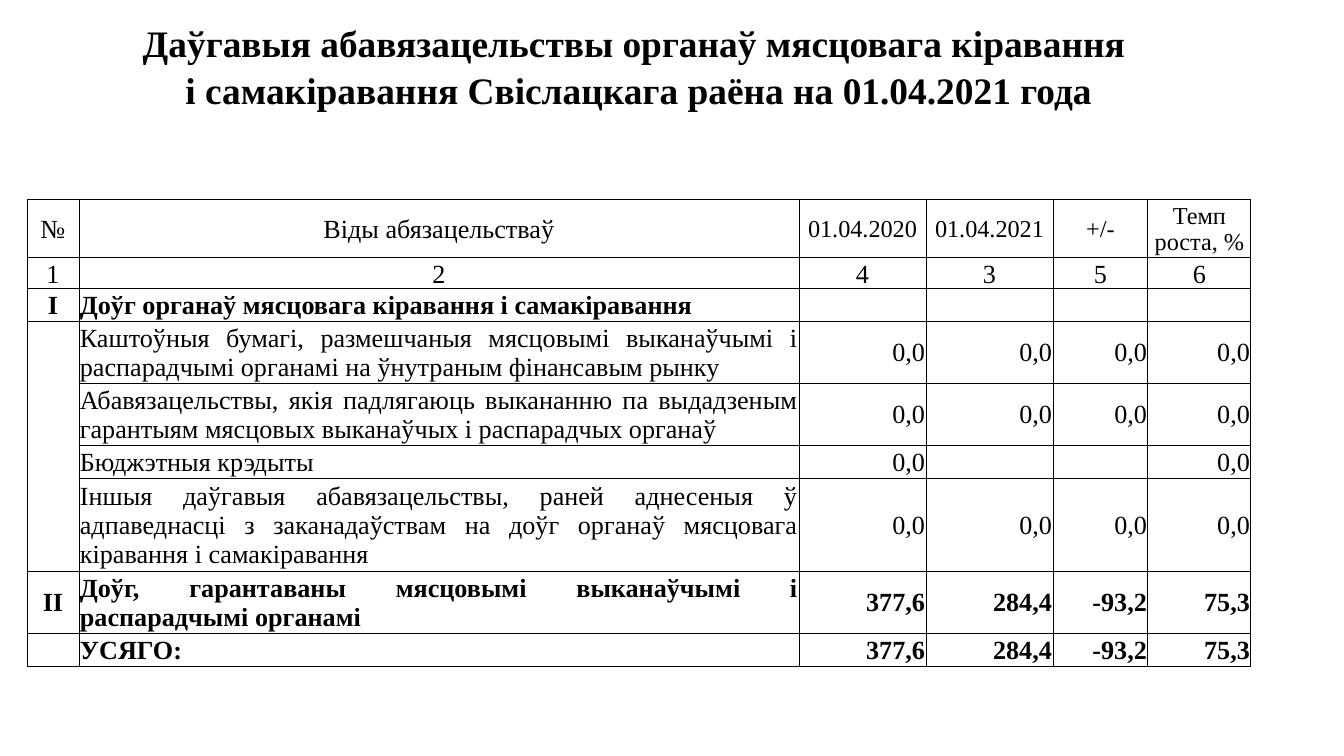
from lxml.etree import SubElement
from pptx import Presentation
from pptx.dml.color import RGBColor
from pptx.enum.text import MSO_ANCHOR as Anchor, PP_ALIGN as Align
from pptx.oxml import parse_xml
from pptx.oxml.ns import nsdecls, qn
from pptx.util import Pt

PX = 914400 / 134.4
FONT = "Times New Roman"
BLACK = RGBColor(0, 0, 0)
WHITE = RGBColor(255, 255, 255)

COLUMNS = [52, 720, 127, 127, 95, 103]
TOP_ROWS = [51, 97, 51, 36]
TITLE_ROW = 1
GRID_ROWS = [58, 31, 31, 62, 62, 31, 93, 62, 31]
OPEN_ROWS = range(3, 7)  # grid rows that share one tall first column

TITLE = ("Даўгавыя абавязацельствы органаў мясцовага кіравання \n"
         "і самакіравання Свіслацкага раёна на 01.04.2021 года")
HEADER = ["№", "Віды абязацельстваў", "01.04.2020", "01.04.2021", "+/-",
          "Темп\nроста, %"]
NUMBERS = ["1", "2", "4", "3", "5", "6"]
ZEROS = ["0,0"] * 4
TOTALS = ["377,6", "284,4", "-93,2", "75,3"]
DEBTS = [
    ["I", "Доўг органаў мясцовага кіравання і самакіравання", *[""] * 4],
    ["", "Каштоўныя бумагі, размешчаныя мясцовымі выканаўчымі і "
         "распарадчымі органамі на ўнутраным фінансавым рынку", *ZEROS],
    ["", "Абавязацельствы, якія падлягаюць выкананню па выдадзеным "
         "гарантыям мясцовых выканаўчых і распарадчых органаў", *ZEROS],
    ["", "Бюджэтныя крэдыты", "0,0", "", "", "0,0"],
    ["", "Іншыя даўгавыя абавязацельствы, раней аднесеныя ў адпаведнасці "
         "з заканадаўствам на доўг органаў мясцовага кіравання і "
         "самакіравання", *ZEROS],
    ["II", "Доўг, гарантаваны мясцовымі выканаўчымі і распарадчымі "
           "органамі", *TOTALS],
    ["", "УСЯГО:", *TOTALS],
]
BOLD_DEBTS = {0, 5, 6}


def px(length):
    return round(length * PX)


def write(cell, text, size=14, bold=False, align=Align.CENTER,
          anchor=Anchor.MIDDLE, spacing=None):
    cell.vertical_anchor = anchor
    cell.margin_left = cell.margin_right = cell.margin_top = px(1)
    cell.margin_bottom = 0
    frame = cell.text_frame
    for index, line in enumerate(text.split("\n")):
        para = frame.add_paragraph() if index else frame.paragraphs[0]
        para.alignment = align
        if spacing:
            para.line_spacing = spacing
        if not line:
            # An empty cell keeps the row low only with its own text size
            SubElement(para._p, qn("a:endParaRPr"), sz=str(size * 100))
            continue
        span = para.add_run()
        span.text = line
        span.font.name = FONT
        span.font.size = Pt(size)
        span.font.bold = bold
        span.font.color.rgb = BLACK


def paint(cell, sides):
    """Fill the cell and rule the given sides, any of L, R, T and B."""
    cell.fill.solid()
    cell.fill.fore_color.rgb = WHITE
    properties = cell._tc.get_or_add_tcPr()
    ink = f'<a:solidFill><a:srgbClr val="{BLACK}"/></a:solidFill>'
    for index, side in enumerate("LRTB"):
        stroke = ink if side in sides else "<a:noFill/>"
        properties.insert(index, parse_xml(
            f'<a:ln{side} {nsdecls("a")} w="{Pt(0.5)}">{stroke}</a:ln{side}>'))


def fill_title_rows(table):
    last = len(TOP_ROWS) - 1
    for row in range(len(TOP_ROWS)):
        for column in range(len(COLUMNS)):
            cell = table.cell(row, column)
            paint(cell, "B" if row == last else "")
            if row == TITLE_ROW and column == 0:
                write(cell, TITLE, size=20, bold=True, anchor=Anchor.BOTTOM,
                      spacing=1.15)
            else:
                write(cell, "")
        table.cell(row, 0).merge(table.cell(row, len(COLUMNS) - 1))


def fill_grid(table):
    first = len(TOP_ROWS)
    for column, (title, number) in enumerate(zip(HEADER, NUMBERS)):
        write(table.cell(first, column), title, size=14 if column < 2 else 13)
        write(table.cell(first + 1, column), number, anchor=Anchor.BOTTOM)

    aligns = [Align.CENTER, Align.JUSTIFY, *[Align.RIGHT] * 4]
    for index, debt in enumerate(DEBTS):
        for column, text in enumerate(debt):
            write(table.cell(first + 2 + index, column), text,
                  bold=index in BOLD_DEBTS, align=aligns[column])

    for row in range(len(GRID_ROWS)):
        for column in range(len(COLUMNS)):
            sides = "LRTB"
            if column == 0 and row in OPEN_ROWS:
                sides = "LR"
                sides += "T" if row == OPEN_ROWS[0] else ""
                sides += "B" if row == OPEN_ROWS[-1] else ""
            paint(table.cell(first + row, column), sides)


def add_debt_table(page, left, top):
    heights = TOP_ROWS + GRID_ROWS
    table = page.shapes.add_table(
        len(heights), len(COLUMNS), px(left), px(top),
        px(sum(COLUMNS)), px(sum(heights))).table
    table.first_row = table.horz_banding = False
    for column, width in zip(table.columns, COLUMNS):
        column.width = px(width)
    for row, height in zip(table.rows, heights):
        row.height = px(height)
    fill_title_rows(table)
    fill_grid(table)


def main():
    deck = Presentation()
    deck.slide_width, deck.slide_height = px(1344), px(756)
    page = deck.slides.add_slide(deck.slide_layouts[6])
    add_debt_table(page, 27, -35)
    deck.save("out.pptx")


if __name__ == "__main__":
    main()
